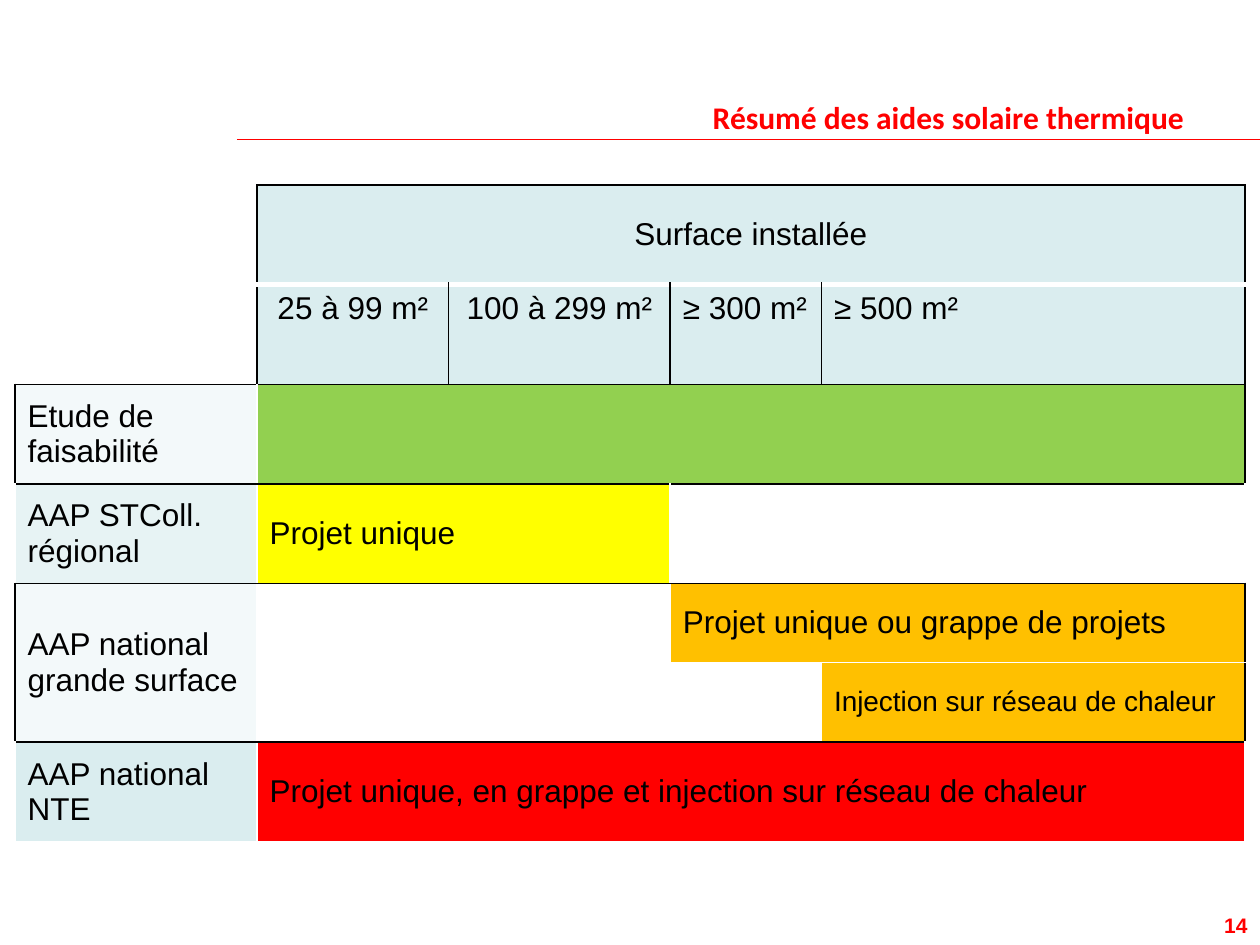
from lxml.etree import SubElement
from pptx import Presentation
from pptx.dml.color import RGBColor
from pptx.enum.shapes import MSO_CONNECTOR
from pptx.enum.text import MSO_ANCHOR, PP_ALIGN
from pptx.oxml.ns import qn
from pptx.util import Inches, Pt

BLACK = RGBColor(0x00, 0x00, 0x00)
WHITE = RGBColor(0xFF, 0xFF, 0xFF)
RED = RGBColor(0xFF, 0x00, 0x00)
GREEN = RGBColor(0x92, 0xD0, 0x50)
YELLOW = RGBColor(0xFF, 0xFF, 0x00)
ORANGE = RGBColor(0xFF, 0xC0, 0x00)
HEADER_BLUE = RGBColor(0xDA, 0xED, 0xEF)
PALE_BLUE = RGBColor(0xE7, 0xF3, 0xF4)
FAINT_BLUE = RGBColor(0xF3, 0xF9, 0xFA)

# Border codes are read in the order left, top, right, bottom.
BORDERS = {"k": (BLACK, 1), "w": (WHITE, 1), "W": (WHITE, 3)}
SIDES = {"a:lnL": 0, "a:lnR": 2, "a:lnT": 1, "a:lnB": 3}

COLUMN_WIDTHS = [1.92, 1.52, 1.76, 1.2, 3.36]
ROW_HEIGHTS = [0.79, 0.79, 0.79, 0.79, 0.63, 0.63, 0.79]
SURFACES = [
    ("25 à 99 m²", PP_ALIGN.CENTER),
    ("100 à 299 m²", PP_ALIGN.CENTER),
    ("≥ 300 m²", PP_ALIGN.LEFT),
    ("≥ 500 m²", PP_ALIGN.LEFT),
]
# row, column, rows spanned, columns spanned, text, fill, borders
AID_CELLS = [
    (2, 0, 1, 1, "Etude de faisabilité", FAINT_BLUE, "kkwk"),
    (2, 1, 1, 4, "", GREEN, "wkkk"),
    (3, 0, 1, 1, "AAP STColl. régional", PALE_BLUE, "wkwk"),
    (3, 1, 1, 2, "Projet unique", YELLOW, "wkwk"),
    (3, 3, 1, 2, "", WHITE, "wkwk"),
    (4, 0, 2, 1, "AAP national\ngrande surface", FAINT_BLUE, "kkwk"),
    (4, 1, 1, 2, "", WHITE, "wkww"),
    (4, 3, 1, 2, "Projet unique ou grappe de projets", ORANGE, "wkkw"),
    (5, 1, 1, 3, "", WHITE, "wwwk"),
    (6, 0, 1, 1, "AAP national NTE", HEADER_BLUE, "wkww"),
    (6, 1, 1, 4, "Projet unique, en grappe et injection sur réseau de chaleur",
     RED, "wkww"),
]


def write(frame, text, size=18, color=BLACK, font="Arial", bold=False,
          align=PP_ALIGN.LEFT):
    frame.text = text
    for para in frame.paragraphs:
        para.alignment = align
        para.font.size = Pt(size)
        for span in para.runs:
            span.font.name = font
            span.font.size = Pt(size)
            span.font.bold = bold
            span.font.color.rgb = color


def set_borders(cell, codes):
    properties = cell._tc.get_or_add_tcPr()
    for tag, position in SIDES.items():
        color, width = BORDERS[codes[position]]
        line = SubElement(properties, qn(tag), w=str(Pt(width)))
        fill = SubElement(line, qn("a:solidFill"))
        SubElement(fill, qn("a:srgbClr"), val=str(color))


class SlideBuilder:
    def __init__(self, page):
        self.page = page

    def title(self, text, left, top, width, height):
        box = self.page.shapes.title
        box.left, box.top = Inches(left), Inches(top)
        box.width, box.height = Inches(width), Inches(height)
        box.text_frame.vertical_anchor = MSO_ANCHOR.MIDDLE
        write(box.text_frame, text, color=RED, font="Calibri", bold=True,
              align=PP_ALIGN.RIGHT)

    def rule(self, left, right, top):
        line = self.page.shapes.add_connector(
            MSO_CONNECTOR.STRAIGHT, Inches(left), Inches(top),
            Inches(right), Inches(top))
        line.line.color.rgb = RED
        line.line.width = Pt(0.75)
        SubElement(line._element.spPr, qn("a:effectLst"))

    def page_number(self, text, left, top, width, height):
        box = self.page.shapes.add_textbox(
            Inches(left), Inches(top), Inches(width), Inches(height))
        box.text_frame.word_wrap = True
        box.text_frame.vertical_anchor = MSO_ANCHOR.BOTTOM
        write(box.text_frame, text, size=12, color=RED, bold=True,
              align=PP_ALIGN.RIGHT)

    def table(self, left, top, widths, heights):
        table = self.page.shapes.add_table(
            len(heights), len(widths), Inches(left), Inches(top),
            Inches(sum(widths)), Inches(sum(heights))).table
        table.first_row = False
        table.horz_banding = False
        for column, width in zip(table.columns, widths):
            column.width = Inches(width)
        for row, height in zip(table.rows, heights):
            row.height = Inches(height)
        return table

    def cell(self, table, row, column, rows, columns, text, fill, borders,
             anchor=MSO_ANCHOR.MIDDLE, **text_format):
        """Fill one cell, merged over the given rows and columns."""
        cell = table.cell(row, column)
        if rows * columns > 1:
            cell.merge(table.cell(row + rows - 1, column + columns - 1))
        for i in range(row, row + rows):
            for j in range(column, column + columns):
                set_borders(table.cell(i, j), borders)
        if fill is None:
            cell.fill.background()
        else:
            cell.fill.solid()
            cell.fill.fore_color.rgb = fill
        cell.vertical_anchor = anchor
        write(cell.text_frame, text, **text_format)


def main():
    deck = Presentation()
    deck.slide_width, deck.slide_height = Inches(10), Inches(7.5)
    builder = SlideBuilder(deck.slides.add_slide(deck.slide_layouts[5]))

    builder.rule(1.88, 10, 1.11)
    builder.title("Résumé des aides solaire thermique", 0.5, 0.3, 9, 1.25)

    table = builder.table(0.12, 1.47, COLUMN_WIDTHS, ROW_HEIGHTS)
    builder.cell(table, 0, 0, 1, 1, "", None, "wwkW")
    builder.cell(table, 0, 1, 1, 4, "Surface installée", HEADER_BLUE, "kkkW",
                 align=PP_ALIGN.CENTER)
    builder.cell(table, 1, 0, 1, 1, "", None, "wWkk")
    for column, (surface, align) in enumerate(SURFACES, start=1):
        builder.cell(table, 1, column, 1, 1, surface, HEADER_BLUE, "kWkk",
                     anchor=MSO_ANCHOR.TOP, align=align)
    for aid in AID_CELLS:
        builder.cell(table, *aid)
    builder.cell(table, 5, 4, 1, 1, "Injection sur réseau de chaleur", ORANGE,
                 "wwkk", size=16)

    builder.page_number("14", 7.67, 6.97, 2.33, 0.52)
    deck.save("out.pptx")


if __name__ == "__main__":
    main()
